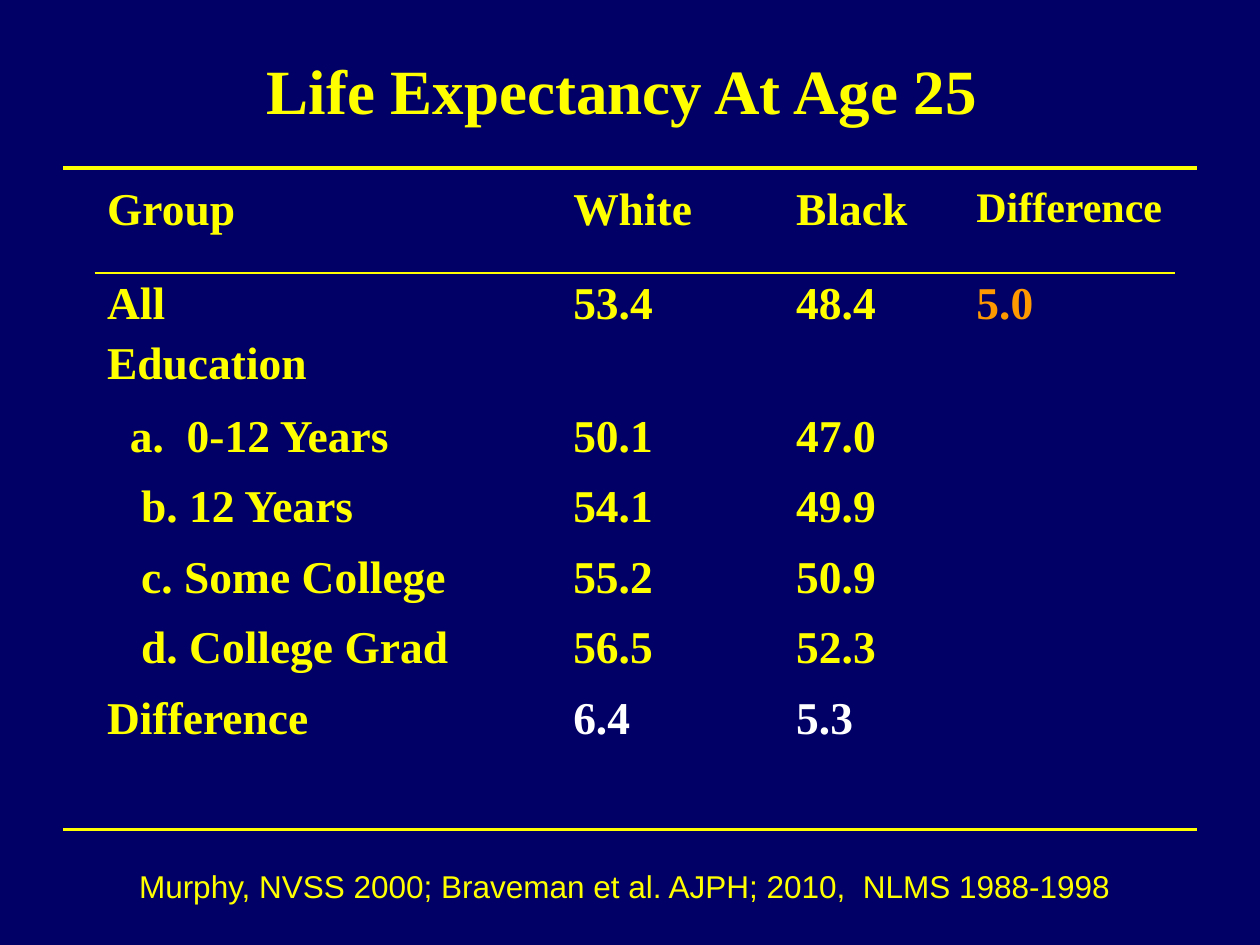
from lxml.etree import SubElement
from pptx import Presentation
from pptx.dml.color import RGBColor
from pptx.enum.shapes import MSO_CONNECTOR
from pptx.enum.text import MSO_ANCHOR, MSO_AUTO_SIZE, PP_ALIGN
from pptx.oxml import parse_xml
from pptx.oxml.ns import nsdecls, qn
from pptx.util import Pt

YELLOW, ORANGE, WHITE, NAVY = "FFFF00", "FF9900", "FFFFFF", "000066"
SERIF, SANS = "Times New Roman", "Arial"
PLAIN_TABLE = "{2D5ABB26-0587-4C30-8999-92F81FD0307C}"
COLUMNS = (266.4, 127.44, 102.96, 120.96)
HEIGHTS = (54, 75.6) + (40.32,) * 5
INDENTS = {2: 13, 3: 19.5, 4: 19.5, 5: 19.5}
ROWS = (
    ("Group", "White", "Black", "Difference"),
    ("All\nEducation", "53.4", "48.4", "5.0"),
    ("a.  0-12 Years", "50.1", "47.0", ""),
    ("b. 12 Years", "54.1", "49.9", ""),
    ("c. Some College", "55.2", "50.9", ""),
    ("d. College Grad", "56.5", "52.3", ""),
    ("Difference", "6.4", "5.3", ""),
)
SPECIAL = {
    (0, 3): {"size": 24},
    (1, 3): {"color": ORANGE},
    (6, 1): {"color": WHITE},
    (6, 2): {"color": WHITE},
}


def paint(color):
    """Turn a hex string into a colour."""
    return RGBColor.from_string(color)


def write(frame, text, size=26, color=YELLOW, font=SERIF, bold=True, align=PP_ALIGN.LEFT):
    """Fill a text frame with one formatted paragraph for each line."""
    frame.word_wrap = True
    for number, line in enumerate(text.split("\n")):
        para = frame.add_paragraph() if number else frame.paragraphs[0]
        para.alignment = align
        para.space_before = Pt(size * 0.2 if number else 0)
        span = para.add_run()
        span.text = line
        span.font.name = font
        span.font.size = Pt(size)
        span.font.bold = bold
        span.font.color.rgb = paint(color)


def add_title(page, left, top, width, height):
    """Place the heading in the title placeholder."""
    title = page.shapes.title
    title.left, title.top = Pt(left), Pt(top)
    title.width, title.height = Pt(width), Pt(height)
    frame = title.text_frame
    frame.auto_size = MSO_AUTO_SIZE.NONE
    frame.vertical_anchor = MSO_ANCHOR.MIDDLE
    write(frame, "Life Expectancy At Age 25 ", size=36, align=PP_ALIGN.CENTER)


def add_rule(page, left, top, width):
    """Draw a horizontal rule."""
    rule = page.shapes.add_connector(
        MSO_CONNECTOR.STRAIGHT, Pt(left), Pt(top), Pt(left + width), Pt(top)
    )
    rule.line.color.rgb = paint(YELLOW)
    rule.line.width = Pt(2.25)
    SubElement(rule._element.spPr, qn("a:effectLst"))


def underline_cell(cell):
    """Give a cell a thin bottom border."""
    border = parse_xml(
        f'<a:lnB {nsdecls("a")} w="{Pt(1)}"><a:solidFill>'
        f'<a:srgbClr val="{YELLOW}"/></a:solidFill></a:lnB>'
    )
    cell._tc.get_or_add_tcPr().insert(0, border)


def add_expectancy_table(page, left, top):
    """Place the life expectancy table."""
    table = page.shapes.add_table(
        len(ROWS), len(COLUMNS), Pt(left), Pt(top), Pt(sum(COLUMNS)), Pt(sum(HEIGHTS))
    ).table
    table.first_row = table.horz_banding = False
    table._tbl.tblPr.find(qn("a:tableStyleId")).text = PLAIN_TABLE
    for column, width in zip(table.columns, COLUMNS):
        column.width = Pt(width)
    for r, (values, height) in enumerate(zip(ROWS, HEIGHTS)):
        table.rows[r].height = Pt(height)
        for c, value in enumerate(values):
            cell = table.cell(r, c)
            cell.fill.background()
            if value:
                write(cell.text_frame, value, **SPECIAL.get((r, c), {}))
            if r == 0:
                underline_cell(cell)
        table.cell(r, 0).margin_left = Pt(7.2 + INDENTS.get(r, 0))


def add_sources(page, left, top, width, height):
    """Place the line of sources."""
    box = page.shapes.add_textbox(Pt(left), Pt(top), Pt(width), Pt(height))
    box.text_frame.auto_size = MSO_AUTO_SIZE.SHAPE_TO_FIT_TEXT
    write(
        box.text_frame,
        "Murphy, NVSS 2000; Braveman et al. AJPH; 2010,  NLMS 1988-1998",
        size=18, font=SANS, bold=False, align=PP_ALIGN.CENTER,
    )


def main():
    """Build and save the slide."""
    deck = Presentation()
    deck.slide_width, deck.slide_height = Pt(720), Pt(540)
    page = deck.slides.add_slide(deck.slide_layouts[5])
    page.background.fill.solid()
    page.background.fill.fore_color.rgb = paint(NAVY)
    add_title(page, 54, 6, 612, 90)
    add_expectancy_table(page, 54, 102)
    for top in (96, 474):
        add_rule(page, 36, top, 648)
    add_sources(page, 54, 492, 606, 29)
    deck.save("out.pptx")


if __name__ == "__main__":
    main()
